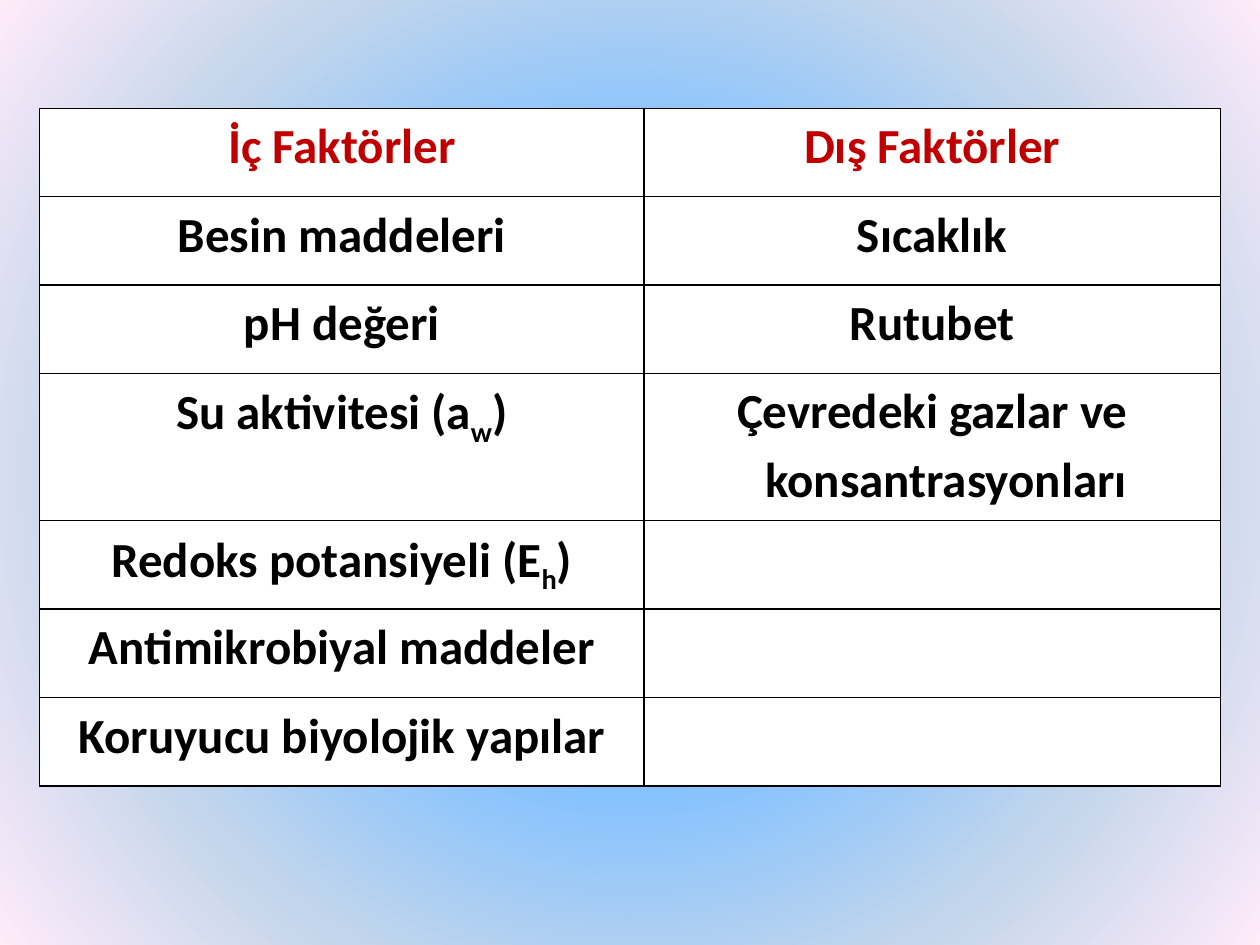
"""Build a slide with a two-column table of internal and external factors."""
import pptx
import pptx.dml.color
import pptx.enum.text
import pptx.oxml
import pptx.oxml.ns
import pptx.util

Pt = pptx.util.Pt
NS = pptx.oxml.ns.nsdecls("a")


def rgb(value):
    return pptx.dml.color.RGBColor.from_string(value)


class Deck:
    font, size, ink, accent, paper = "Calibri", 28, "000000", "C00000", "FFFFFF"

    def __init__(self, prs):
        self.s = prs.slides.add_slide(prs.slide_layouts[6])

    def background(self, stops):
        self.s.background.fill.gradient()
        old = next(self.s.element.iter(pptx.oxml.ns.qn("a:gradFill")))
        gs = "".join(
            f'<a:gs pos="{pos * 1000}"><a:srgbClr val="{color}"/></a:gs>'
            for pos, color in stops
        )
        new = pptx.oxml.parse_xml(
            f'<a:gradFill {NS} rotWithShape="1"><a:gsLst>{gs}</a:gsLst>'
            '<a:path path="circle"><a:fillToRect l="50000" t="50000" '
            'r="50000" b="50000"/></a:path></a:gradFill>'
        )
        old.getparent().replace(old, new)

    def borders(self, cell):
        tcPr = cell._tc.get_or_add_tcPr()
        for i, side in enumerate(("lnL", "lnR", "lnT", "lnB")):
            tcPr.insert(i, pptx.oxml.parse_xml(
                f'<a:{side} {NS} w="{Pt(1)}"><a:solidFill>'
                f'<a:srgbClr val="{self.ink}"/></a:solidFill></a:{side}>'
            ))

    def cell(self, cell, parts, color, margin):
        cell.fill.solid()
        cell.fill.fore_color.rgb = rgb(self.paper)
        self.borders(cell)
        cell.margin_left = cell.margin_right = Pt(0.72)
        cell.margin_top = cell.margin_bottom = 0
        if not parts:
            return
        p = cell.text_frame.paragraphs[0]
        p.alignment = pptx.enum.text.PP_ALIGN.CENTER
        p.line_spacing = 1.15
        pPr = p._p.get_or_add_pPr()
        pPr.set("marL", str(Pt(margin)))
        pPr.set("indent", str(Pt(-30.24)))
        p.font.name, p.font.size, p.font.bold = self.font, Pt(self.size), True
        p.font.color.rgb = rgb(color)
        for i, text in enumerate(parts):
            r = p.add_run()
            r.text = text
            r.font.name, r.font.size, r.font.bold = self.font, Pt(self.size), True
            r.font.color.rgb = rgb(color)
            if i == 1:
                r.font._element.set("baseline", "-25000")

    def table(self, rows, left, top, widths, heights, margins):
        tbl = self.s.shapes.add_table(
            len(rows), len(widths), Pt(left), Pt(top),
            Pt(sum(widths)), Pt(sum(heights)),
        ).table
        tbl.first_row = tbl.horz_banding = False
        for col, width in zip(tbl.columns, widths):
            col.width = Pt(width)
        for i, (row, height) in enumerate(zip(rows, heights)):
            tbl.rows[i].height = Pt(height)
            color = self.ink if i else self.accent
            for j, parts in enumerate(row):
                self.cell(tbl.cell(i, j), parts, color, margins[j])


def main():
    prs = pptx.Presentation()
    prs.slide_width, prs.slide_height = Pt(720), Pt(540)
    deck = Deck(prs)
    deck.background([(0, "5E9EFF"), (40, "85C2FF"), (70, "C4D6EB"), (100, "FFEBFA")])
    rows = [
        (["İç Faktörler"], ["Dış Faktörler"]),
        (["Besin maddeleri"], ["Sıcaklık"]),
        (["pH değeri"], ["Rutubet"]),
        (["Su aktivitesi (a", "w", ")"], ["Çevredeki gazlar ve konsantrasyonları"]),
        (["Redoks potansiyeli (E", "h", ")"], []),
        (["Antimikrobiyal maddeler"], []),
        (["Koruyucu biyolojik yapılar"], []),
    ]
    heights = [50.5] * 3 + [84.2] + [50.5] * 3
    deck.table(rows, 22.5, 61.9, (345.6, 329.2), heights, (17.28, 15.84))
    prs.save("out.pptx")


if __name__ == "__main__":
    main()
